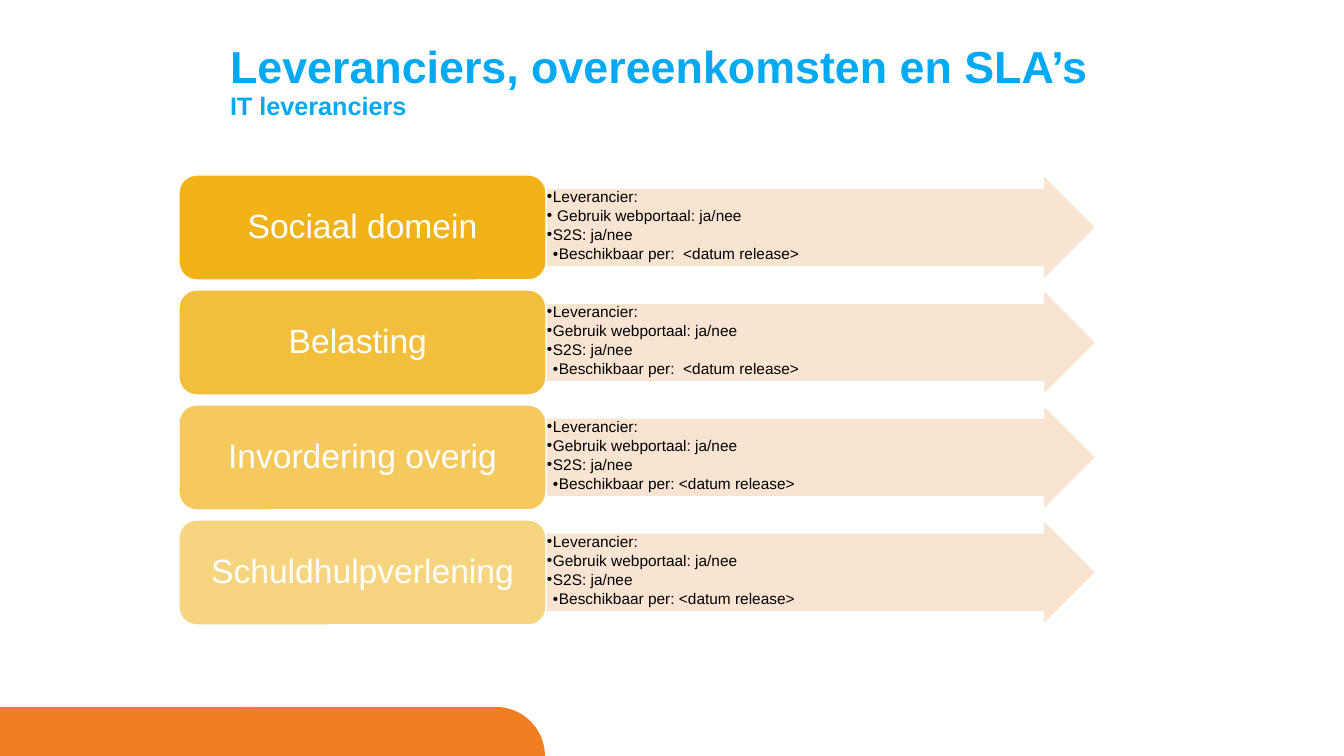
"""Build the slide on IT suppliers, agreements and SLAs."""
from math import cos, pi, sin

from lxml.etree import SubElement
from pptx import Presentation
from pptx.dml.color import RGBColor
from pptx.enum.shapes import MSO_SHAPE as Shape
from pptx.enum.text import MSO_ANCHOR as Anchor, PP_ALIGN as Align
from pptx.oxml.ns import qn
from pptx.util import Pt

TITLE = "Leveranciers, overeenkomsten en SLA’s"
SUBTITLE = "IT leveranciers"
SUPPLIER, PORTAL, S2S = "Leverancier:", "Gebruik webportaal: ja/nee", "S2S: ja/nee"
WIDE_RELEASE = "Beschikbaar per:  <datum release>"
RELEASE = "Beschikbaar per: <datum release>"
DOMAINS = [
    ("Sociaal domein", 90, [SUPPLIER, " " + PORTAL, S2S, WIDE_RELEASE]),
    ("Belasting ", 77, [SUPPLIER, PORTAL, S2S, WIDE_RELEASE]),
    ("Invordering overig", 63, [SUPPLIER, PORTAL, S2S, RELEASE]),
    ("Schuldhulpverlening", 50, [SUPPLIER, PORTAL, S2S, RELEASE]),
]

FONT = "Arial"
BLUE, ORANGE, AMBER, PEACH = "00A9F3", "F07E23", "F0AB00", "F9E2CC"
WHITE, BLACK = "FFFFFF", "000000"
SLIDE_W, SLIDE_H = 1344, 756
ROW_TOP, ROW_H, ROW_PITCH = 175, 105, 115
LABEL_X, LABEL_W, LABEL_PAD = 179, 367, 5
ARROW_X, ARROW_W, ARROW_PAD = LABEL_X + LABEL_W, 550, 13
DETAIL_W, INDENT = 511, 6
TAB_LEFTS, TAB_W, TAB_H = (0, 248), 297, 49
ARC_STEPS = 24


def px(length):
    return round(length * 914400 / 100.8)


def color(hex_code):
    return RGBColor.from_string(hex_code)


def paint(shape, hex_code, opacity=100):
    shape.shadow.inherit = False
    shape.fill.solid()
    shape.fill.fore_color.rgb = color(hex_code)
    if opacity < 100:
        tint = shape.fill._xPr.find(qn("a:solidFill"))[0]
        SubElement(tint, qn("a:alpha")).set("val", str(opacity * 1000))


def add_block(slide, kind, left, top, width, hex_code, opacity):
    block = slide.shapes.add_shape(kind, px(left), px(top), px(width), px(ROW_H))
    paint(block, hex_code, opacity)
    block.line.color.rgb = color(WHITE)
    block.line.width = Pt(1)
    return block


def add_text(slide, left, top, width, height, text, inset=0, anchor=Anchor.MIDDLE):
    box = slide.shapes.add_textbox(px(left), px(top), px(width), px(height))
    frame = box.text_frame
    frame.word_wrap = True
    frame.vertical_anchor = anchor
    frame.margin_left = frame.margin_right = px(inset)
    frame.margin_top = frame.margin_bottom = px(inset)
    frame.text = text
    for paragraph in frame.paragraphs:
        paragraph.line_spacing = 0.9
    return frame.paragraphs


def style(run, size, hex_code, bold=False):
    run.font.name = FONT
    run.font.size = Pt(size)
    run.font.bold = bold
    run.font.color.rgb = color(hex_code)


def add_tab(slide, left):
    center_x = left + TAB_W - TAB_H
    angles = [pi / 2 * (1 - step / ARC_STEPS) for step in range(ARC_STEPS + 1)]
    arc = [(px(center_x + TAB_H * cos(a)), px(SLIDE_H - TAB_H * sin(a))) for a in angles]
    outline = slide.shapes.build_freeform(px(left), px(SLIDE_H))
    outline.add_line_segments([(px(left), px(SLIDE_H - TAB_H))] + arc)
    tab = outline.convert_to_shape()
    paint(tab, ORANGE)
    tab.line.fill.background()


def add_domain(slide, top, name, opacity, details):
    arrow = add_block(slide, Shape.RIGHT_ARROW, ARROW_X, top, ARROW_W, PEACH, 90)
    arrow.adjustments[0], arrow.adjustments[1] = 0.75, 0.5
    lines = add_text(slide, ARROW_X, top + ARROW_PAD, DETAIL_W, ROW_H - 2 * ARROW_PAD,
                     "\n".join(details), 1, Anchor.TOP)
    for line, level in zip(lines, (1, 1, 1, 2)):
        line.level = level
        line.space_after = Pt(1.8)
        properties = line._p.get_or_add_pPr()
        properties.set("marL", str(px(INDENT * level)))
        properties.set("indent", str(-px(INDENT)))
        SubElement(properties, qn("a:buFont")).set("typeface", FONT)
        SubElement(properties, qn("a:buChar")).set("char", "•")
        style(line.runs[0], 11, BLACK)

    add_block(slide, Shape.ROUNDED_RECTANGLE, LABEL_X, top, LABEL_W, AMBER, opacity)
    label = add_text(slide, LABEL_X + LABEL_PAD, top + LABEL_PAD, LABEL_W - 2 * LABEL_PAD,
                     ROW_H - 2 * LABEL_PAD, name)[0]
    label.alignment = Align.CENTER
    style(label.runs[0], 24, WHITE)


def main():
    deck = Presentation()
    deck.slide_width, deck.slide_height = px(SLIDE_W), px(SLIDE_H)
    slide = deck.slides.add_slide(deck.slide_layouts[6])
    for left in TAB_LEFTS:
        add_tab(slide, left)
    heading = add_text(slide, 230, 43, 1106, 80, f"{TITLE}\v{SUBTITLE}")[0]
    for run, size in zip(heading.runs, (32, 18)):
        style(run, size, BLUE, True)
    for row, domain in enumerate(DOMAINS):
        add_domain(slide, ROW_TOP + row * ROW_PITCH, *domain)
    deck.save("out.pptx")


if __name__ == "__main__":
    main()
